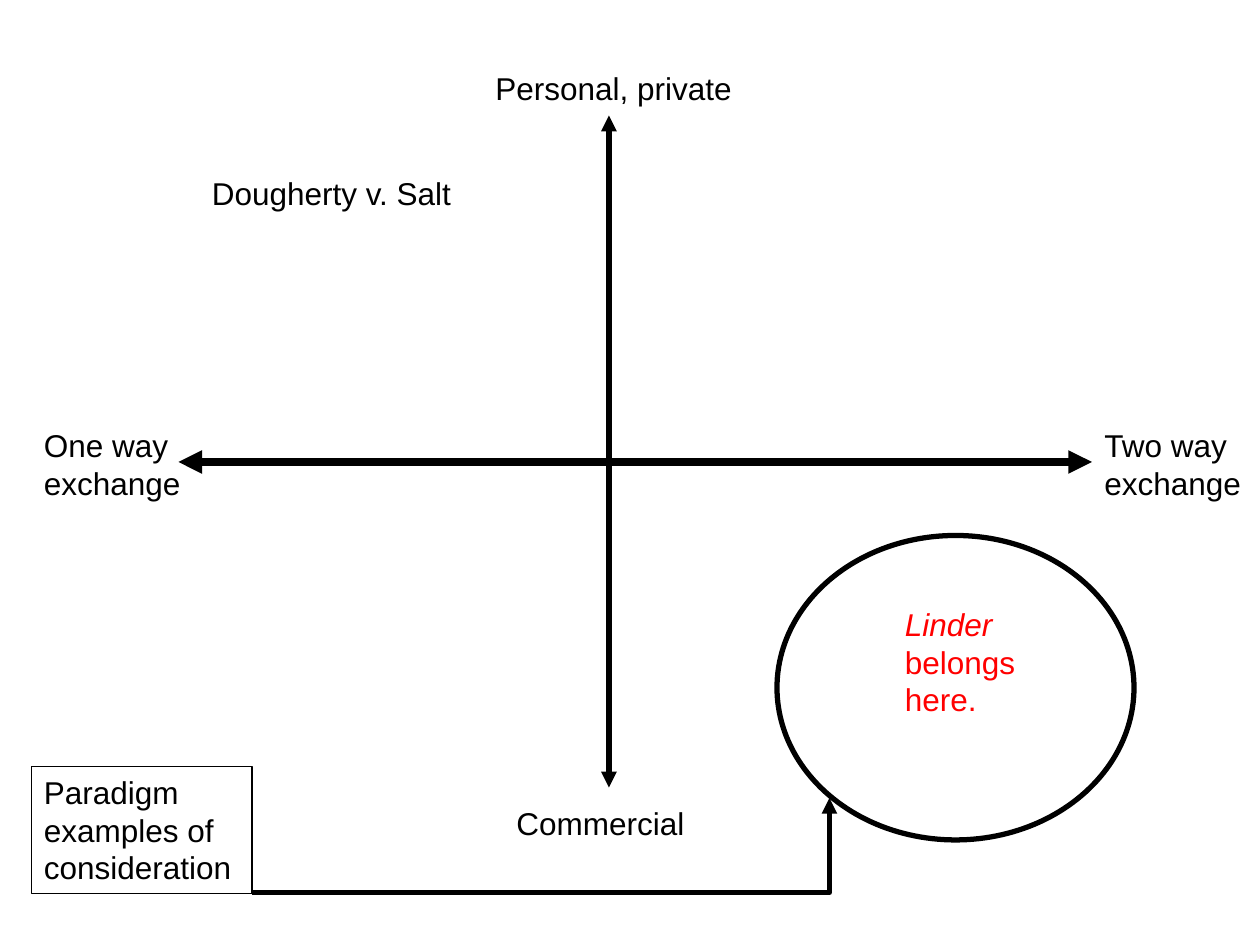
from lxml import etree
from pptx import Presentation
from pptx.dml.color import RGBColor
from pptx.enum.shapes import MSO_CONNECTOR, MSO_SHAPE
from pptx.enum.text import MSO_ANCHOR, PP_ALIGN
from pptx.oxml.ns import qn
from pptx.util import Pt

PX = 7620  # 120 px to the inch
BLACK = RGBColor(0x00, 0x00, 0x00)
WHITE = RGBColor(0xFF, 0xFF, 0xFF)
RED = RGBColor(0xFF, 0x00, 0x00)
RECTANGLE, OVAL = MSO_SHAPE.RECTANGLE, MSO_SHAPE.OVAL
STRAIGHT, ELBOW = MSO_CONNECTOR.STRAIGHT, MSO_CONNECTOR.ELBOW
TOP, LEFT = MSO_ANCHOR.TOP, PP_ALIGN.LEFT

deck = Presentation()
deck.slide_width, deck.slide_height = 1200 * PX, 900 * PX
page = deck.slides.add_slide(deck.slide_layouts[6])


def add_arrow(kind, ends, weight, arrowheads):
    arrow = page.shapes.add_connector(kind, *(value * PX for value in ends))
    arrow.line.color.rgb = BLACK
    arrow.line.width = Pt(weight)
    outline = arrow.line._get_or_add_ln()
    for end in arrowheads:
        etree.SubElement(outline, qn(f"a:{end}"), type="triangle")
    etree.SubElement(arrow._element.spPr, qn("a:effectLst"))
    return arrow


def write(box, spans, color=BLACK):
    frame = box.text_frame
    frame.word_wrap = True
    frame.vertical_anchor = TOP
    para = frame.paragraphs[0]
    para.alignment = LEFT
    for text, italic in spans:
        span = para.add_run()
        span.text = text
        span.font.color.rgb = color
        formats = {"name": "Arial", "size": Pt(18), "italic": italic}
        for name, value in formats.items():
            setattr(span.font, name, value)


# Background panel, paradigm circle and its caption box
outlined = [
    (RECTANGLE, (30, 80, 1100, 660), WHITE, 2, True),
    (OVAL, (740, 510, 340, 290), BLACK, 3, False),
    (RECTANGLE, (30, 730, 210, 121), BLACK, 0.75, False),
]
shapes = []
for kind, place, color, weight, filled in outlined:
    shape = page.shapes.add_shape(kind, *(value * PX for value in place))
    shape.shadow.inherit = False
    if filled:
        shape.fill.solid()
        shape.fill.fore_color.rgb = WHITE
    else:
        shape.fill.background()
    shape.line.color.rgb = color
    shape.line.width = Pt(weight)
    shapes.append(shape)
panel, circle, caption = shapes
write(caption, [("Paradigm examples of consideration", False)])

# Axes
add_arrow(STRAIGHT, (170, 440, 1040, 440), 4.5, ["headEnd", "tailEnd"])
add_arrow(STRAIGHT, (580, 110, 580, 750), 3, ["headEnd", "tailEnd"])

# Caption pointer: one bend, right and then up to the circle
pointer = add_arrow(ELBOW, (240, 850, 790, 760), 3, ["tailEnd"])
pointer._element.spPr.find(qn("a:prstGeom")).set("prst", "bentConnector2")

# Axis labels and cases
labels = [
    ((30, 400, 160, 84), [("One way exchange", False)], BLACK),
    ((1040, 400, 160, 84), [("Two way exchange", False)], BLACK),
    ((460, 60, 250, 48), [("Personal, private", False)], BLACK),
    ((480, 760, 230, 48), [("Commercial", False)], BLACK),
    ((190, 160, 290, 48), [("Dougherty v. Salt", False)], BLACK),
    ((850, 570, 190, 121), [("Linder ", True), ("belongs here.", False)], RED),
]
for place, spans, color in labels:
    label = page.shapes.add_textbox(*(value * PX for value in place))
    write(label, spans, color)

deck.save("out.pptx")
